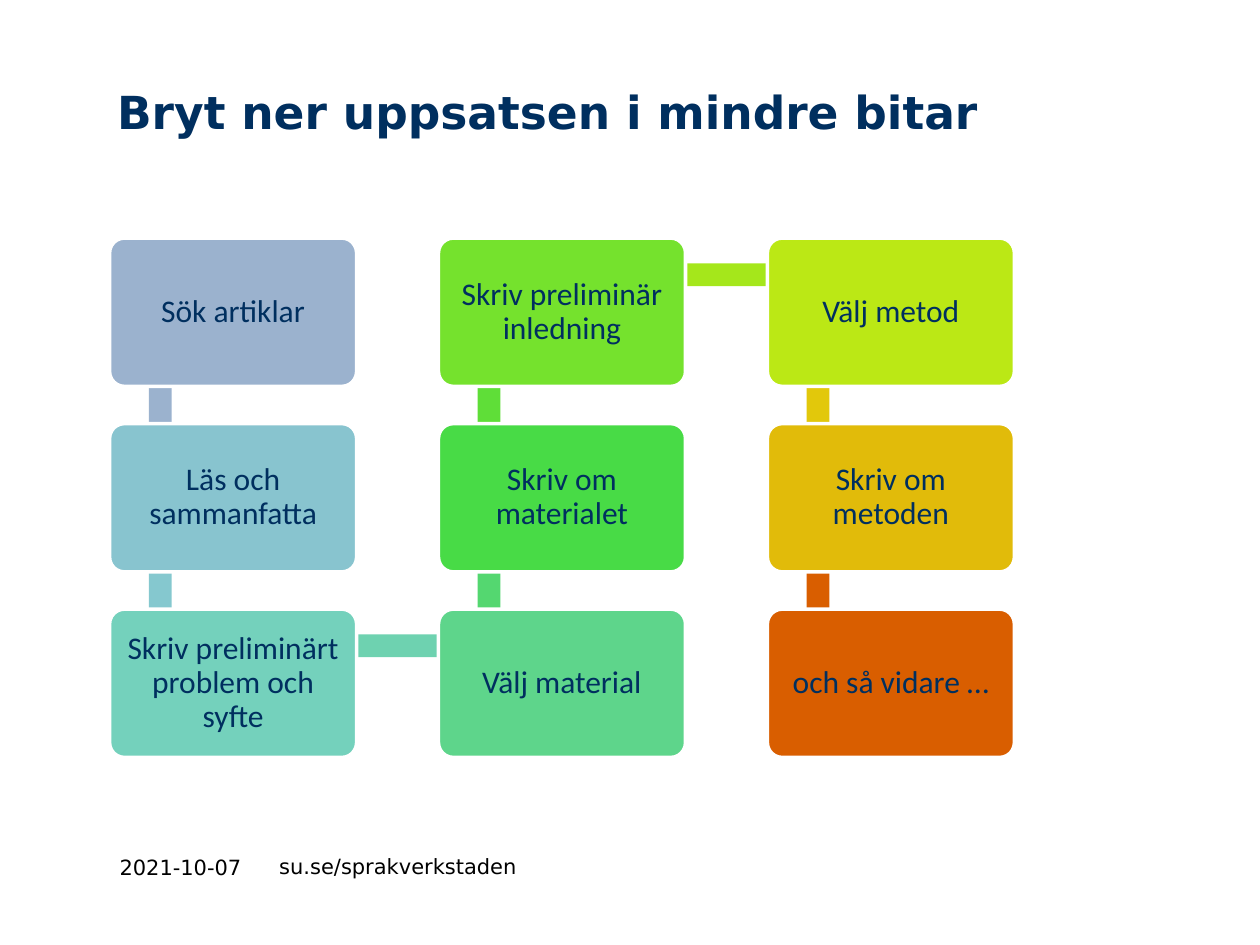
from dataclasses import dataclass

from pptx import Presentation
from pptx.dml.color import RGBColor
from pptx.enum.shapes import MSO_SHAPE
from pptx.enum.text import MSO_ANCHOR, PP_ALIGN
from pptx.util import Cm, Pt


@dataclass(frozen=True)
class Theme:
    navy: str = "002F5F"
    black: str = "000000"
    white: str = "FFFFFF"
    head_font: str = "DejaVu Sans"
    step_font: str = "Calibri"
    title_size: int = 26
    step_size: int = 18
    footer_size: int = 12


@dataclass(frozen=True)
class Step:
    text: str
    col: int
    row: int
    fill: str
    bar_fill: str = ""  # bar leading to the next step

    @property
    def left(self) -> float:
        return X0 + self.col * COL_STEP

    @property
    def top(self) -> float:
        return Y0 + self.row * ROW_STEP


T = Theme()

# Grid, in centimetres
X0, Y0 = 2.21, 4.8
BOX_W, BOX_H = 4.98, 2.99
COL_STEP, ROW_STEP = 6.63, 3.74
BAR = 0.46
JOINT_X, JOINT_Y = 1.02, 0.74  # where bars meet, from a box's corner

# The path runs down, up and down again
STEPS = [
    Step("Sök artiklar", 0, 0, "9BB2CE", "9BB2CE"),
    Step("Läs och sammanfatta", 0, 1, "88C4CF", "85C8CF"),
    Step("Skriv preliminärt problem och syfte", 0, 2, "74D1BC", "6ED2B0"),
    Step("Välj material", 1, 2, "5ED58B", "54D770"),
    Step("Skriv om materialet", 1, 1, "48DB46", "5FDE38"),
    Step("Skriv preliminär inledning", 1, 0, "75E22D", "A5E71B"),
    Step("Välj metod", 2, 0, "BBE815", "E2C80B"),
    Step("Skriv om metoden", 2, 1, "E1BB0A", "D95E00"),
    Step("och så vidare …", 2, 2, "D95E00"),
]


def add_run(p, text: str, font: str, size: int, color: str, bold: bool = False) -> None:
    r = p.add_run()
    r.text = text
    r.font.name = font
    r.font.size = Pt(size)
    r.font.bold = bold
    r.font.color.rgb = RGBColor.from_string(color)


def set_insets(tf, inset: float) -> None:
    tf.margin_left = tf.margin_right = tf.margin_top = tf.margin_bottom = Cm(inset)


def add_label(s, left: float, top: float, width: float, height: float, anchor=MSO_ANCHOR.TOP):
    tf = s.shapes.add_textbox(Cm(left), Cm(top), Cm(width), Cm(height)).text_frame
    tf.word_wrap = True
    tf.vertical_anchor = anchor
    return tf


def add_block(s, kind, left: float, top: float, width: float, height: float, fill: str):
    sp = s.shapes.add_shape(kind, Cm(left), Cm(top), Cm(width), Cm(height))
    sp.shadow.inherit = False
    sp.fill.solid()
    sp.fill.fore_color.rgb = RGBColor.from_string(fill)
    sp.line.fill.background()
    return sp


def add_bar(s, a: Step, b: Step) -> None:
    left, top = min(a.left, b.left) + JOINT_X, min(a.top, b.top) + JOINT_Y
    if a.col == b.col:
        box = (left - BAR / 2, top, BAR, ROW_STEP)
    else:
        box = (left, top - BAR / 2, COL_STEP, BAR)
    add_block(s, MSO_SHAPE.RECTANGLE, *box, a.bar_fill)


def add_step(s, step: Step) -> None:
    sp = add_block(s, MSO_SHAPE.ROUNDED_RECTANGLE, step.left, step.top, BOX_W, BOX_H, step.fill)
    sp.adjustments[0] = 0.1
    sp.line.color.rgb = RGBColor.from_string(T.white)
    sp.line.width = Pt(2)
    tf = sp.text_frame
    tf.word_wrap = True
    tf.vertical_anchor = MSO_ANCHOR.MIDDLE
    set_insets(tf, 0.18)
    p = tf.paragraphs[0]
    p.alignment = PP_ALIGN.CENTER
    p.line_spacing = 0.9
    add_run(p, step.text, T.step_font, T.step_size, T.navy)


def main() -> None:
    prs = Presentation()
    prs.slide_width, prs.slide_height = Cm(25.4), Cm(19.05)
    s = prs.slides.add_slide(prs.slide_layouts[6])

    # Title
    tf = add_label(s, 2.18, 1.52, 19.02, 1.8)
    set_insets(tf, 0.18)
    add_run(tf.paragraphs[0], "Bryt ner uppsatsen i mindre bitar",
            T.head_font, T.title_size, T.navy, bold=True)

    # Path of steps; each bar lies beneath the boxes it joins
    for a, b in zip(STEPS, STEPS[1:]):
        add_bar(s, a, b)
    for step in STEPS:
        add_step(s, step)

    # Footer
    tf = add_label(s, 2.16, 17.09, 3.12, 0.79, MSO_ANCHOR.MIDDLE)
    add_run(tf.paragraphs[0], "2021-10-07", T.head_font, T.footer_size, T.black)
    tf = add_label(s, 5.38, 17.09, 12.47, 1.45)
    add_run(tf.paragraphs[0], "su.se/sprakverkstaden", T.head_font, T.footer_size, T.black)

    prs.save("out.pptx")


if __name__ == "__main__":
    main()
